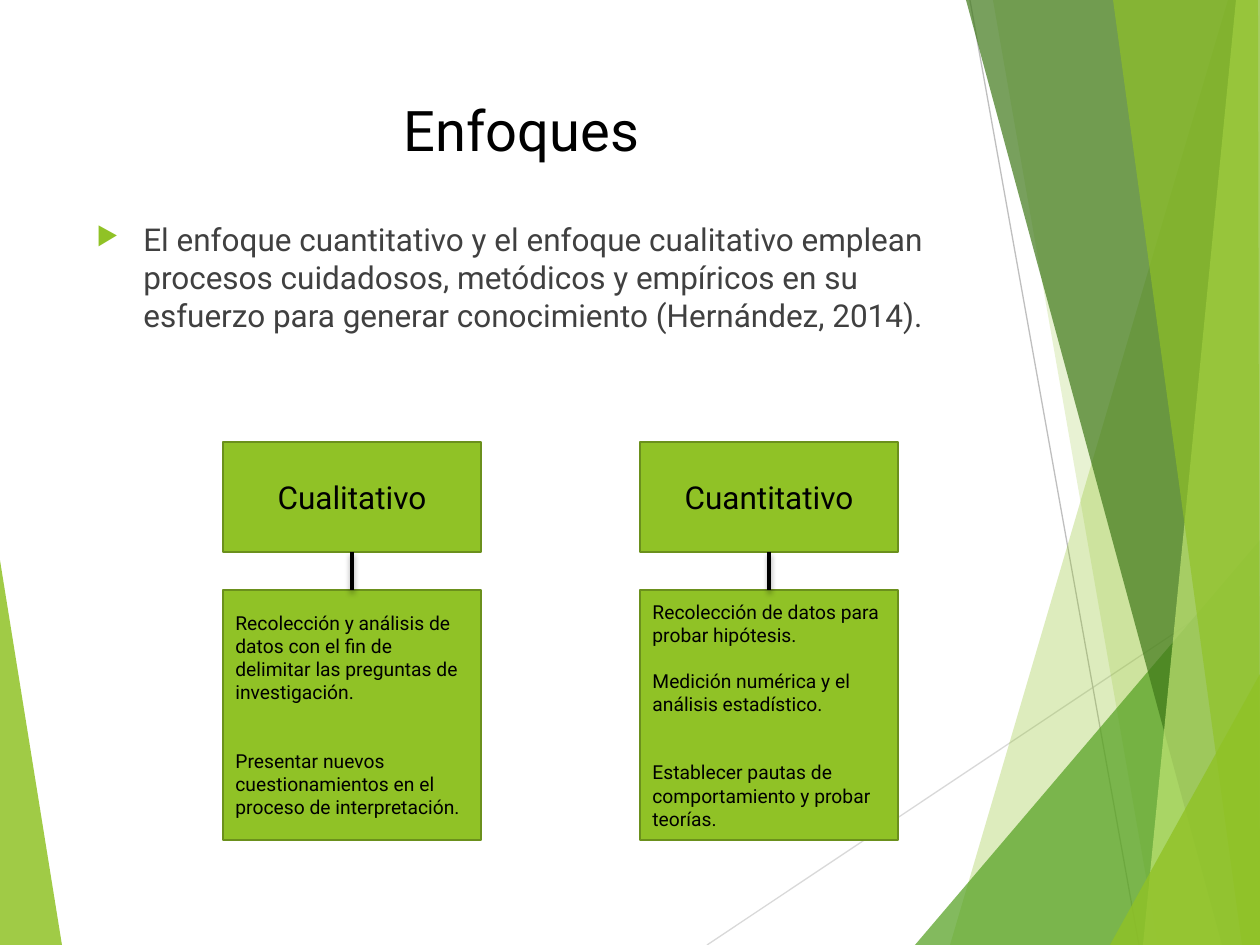
from lxml import etree
from pptx import Presentation
from pptx.dml.color import RGBColor
from pptx.enum.shapes import MSO_CONNECTOR, MSO_SHAPE
from pptx.enum.text import MSO_ANCHOR, PP_ALIGN
from pptx.oxml.ns import qn
from pptx.util import Pt

STRAIGHT = MSO_CONNECTOR.STRAIGHT
RECTANGLE = MSO_SHAPE.RECTANGLE
TOP, MIDDLE = MSO_ANCHOR.TOP, MSO_ANCHOR.MIDDLE
LEFT, CENTER = PP_ALIGN.LEFT, PP_ALIGN.CENTER
TOP_SITE, BOTTOM_SITE = 0, 2
SCALE = 914400 / 126  # EMU per px
WIDTH, HEIGHT = 1260, 945
FONT = "Roboto"
COLORS = {
    "lime": "90C226", "green": "54A021", "forest": "3F7819", "pale": "C0E474",
    "border": "6B901C", "black": "000000", "body": "404040",
    "light_gray": "D9D9D9", "gray": "BFBFBF",
}

# Content
TITLE = "Enfoques"
INTRO = ("El enfoque cuantitativo y el enfoque cualitativo emplean procesos "
         "cuidadosos, metódicos y empíricos en su esfuerzo para generar "
         "conocimiento (Hernández, 2014).")
# Each approach: heading, then (lines of space before, text)
APPROACHES = [
    ("Cualitativo", [
        (0, "Recolección y análisis de datos con el fin de delimitar las "
            "preguntas de investigación."),
        (2, "Presentar nuevos cuestionamientos en el"),
        (0, "proceso de interpretación."),
    ]),
    ("Cuantitativo", [
        (0, "Recolección de datos para probar hipótesis."),
        (1, "Medición numérica y el"),
        (0, "análisis estadístico."),
        (2, "Establecer pautas de comportamiento y probar"),
        (0, "teorías."),
    ]),
]

# Background: corner points, color, opacity in percent
LEFT_WEDGE = ([(0, 560), (62, HEIGHT), (0, HEIGHT)], "lime", 85)
THIN_LINES = [((707, 945), (1260, 576), "light_gray"),
              ((970, 0), (1139, 945), "gray")]
RIGHT_FACETS = [
    ([(1228, 0), (950, HEIGHT), (WIDTH, HEIGHT), (WIDTH, 0)], "lime", 30),
    ([(993, 0), (1158, HEIGHT), (WIDTH, HEIGHT), (WIDTH, 0)], "lime", 20),
    ([(915, HEIGHT), (WIDTH, 540), (WIDTH, HEIGHT)], "green", 72),
    ([(966, 0), (1222, HEIGHT), (WIDTH, HEIGHT), (WIDTH, 0)], "forest", 70),
    ([(1236, 0), (1143, HEIGHT), (WIDTH, HEIGHT), (WIDTH, 0)], "pale", 70),
    ([(1113, 0), (1242, HEIGHT), (WIDTH, HEIGHT), (1258, 0)], "lime", 65),
    ([(1110, HEIGHT), (WIDTH, 674), (WIDTH, HEIGHT)], "lime", 80),
]

# Layout
TITLE_BOX = (84, 84, 875, 91)
INTRO_BOX = (84, 214, 875, 617)
FIRST_LEFT, COLUMN_STEP, COLUMN_WIDTH = 223, 417, 258
HEAD_TOP, HEAD_HEIGHT = 442, 110
DETAIL_TOP, DETAIL_HEIGHT = 590, 250
INDENT = 47
LINE_SPACE = 13  # points


def px(value):
    return round(value * SCALE)


def color(name):
    return RGBColor.from_string(COLORS[name])


def add_xml(parent, tag, **attributes):
    return etree.SubElement(parent, qn(tag), attributes)


def write(frame, lines, size, align, anchor, text_color="black"):
    frame.word_wrap = True
    frame.vertical_anchor = anchor
    for index, (space, text) in enumerate(lines):
        paragraph = frame.add_paragraph() if index else frame.paragraphs[0]
        paragraph.text = text
        paragraph.alignment = align
        paragraph.space_before = Pt(space * LINE_SPACE)
        paragraph.font.name = FONT
        paragraph.font.size = Pt(size)
        paragraph.font.color.rgb = color(text_color)


def add_facet(slide, points, fill, opacity):
    builder = slide.shapes.build_freeform(*points[0], scale=SCALE)
    builder.add_line_segments(points[1:], close=True)
    shape = builder.convert_to_shape()
    shape.shadow.inherit = False
    shape.line.fill.background()
    shape.fill.solid()
    shape.fill.fore_color.rgb = color(fill)
    fill_color = shape.element.spPr.find(".//" + qn("a:srgbClr"))
    add_xml(fill_color, "a:alpha", val=str(opacity * 1000))


def add_line(slide, start, end, line_color, width):
    line = slide.shapes.add_connector(STRAIGHT, *map(px, start + end))
    line.line.color.rgb = color(line_color)
    line.line.width = Pt(width)
    return line, add_xml(line.element.spPr, "a:effectLst")


def add_box(slide, left, top, height, lines, size, align):
    shape = slide.shapes.add_shape(
        RECTANGLE, *map(px, (left, top, COLUMN_WIDTH, height)))
    shape.shadow.inherit = False
    shape.fill.solid()
    shape.fill.fore_color.rgb = color("lime")
    shape.line.color.rgb = color("border")
    shape.line.width = Pt(1.5)
    write(shape.text_frame, lines, size, align, MIDDLE)
    return shape


def add_link(slide, upper, lower):
    link, effects = add_line(slide, (0, 0), (0, 0), "black", 2)
    link.begin_connect(upper, BOTTOM_SITE)
    link.end_connect(lower, TOP_SITE)
    shadow = add_xml(effects, "a:outerShdw", blurRad=str(Pt(3)),
                     dist=str(Pt(2)), dir="5400000", rotWithShape="0")
    shadow_color = add_xml(shadow, "a:srgbClr", val=COLORS["black"])
    add_xml(shadow_color, "a:alpha", val="35000")


def add_bullet(paragraph):
    properties = paragraph._p.get_or_add_pPr()
    properties.set("marL", str(px(INDENT)))
    properties.set("indent", str(-px(INDENT)))
    bullet_color = add_xml(properties, "a:buClr")
    add_xml(bullet_color, "a:srgbClr", val=COLORS["lime"])
    add_xml(properties, "a:buSzPct", val="80000")
    add_xml(properties, "a:buChar", char="▶")
    # Default run properties must follow the bullet
    properties.append(properties.find(qn("a:defRPr")))


def main():
    presentation = Presentation()
    presentation.slide_width = px(WIDTH)
    presentation.slide_height = px(HEIGHT)
    slide = presentation.slides.add_slide(presentation.slide_layouts[5])

    # Background
    add_facet(slide, *LEFT_WEDGE)
    for start, end, line_color in THIN_LINES:
        add_line(slide, start, end, line_color, 0.75)
    for facet in RIGHT_FACETS:
        add_facet(slide, *facet)

    # Title and introduction
    title = slide.shapes.title
    title.left, title.top, title.width, title.height = map(px, TITLE_BOX)
    write(title.text_frame, [(0, TITLE)], 32, CENTER, MIDDLE)
    intro = slide.shapes.add_textbox(*map(px, INTRO_BOX)).text_frame
    write(intro, [(0, INTRO)], 18, LEFT, TOP, "body")
    add_bullet(intro.paragraphs[0])

    # One column per approach
    for index, (heading, details) in enumerate(APPROACHES):
        left = FIRST_LEFT + index * COLUMN_STEP
        head = add_box(slide, left, HEAD_TOP, HEAD_HEIGHT,
                       [(0, heading)], 18, CENTER)
        detail = add_box(slide, left, DETAIL_TOP, DETAIL_HEIGHT,
                         details, 11, LEFT)
        add_link(slide, head, detail)

    presentation.save("out.pptx")


if __name__ == "__main__":
    main()
